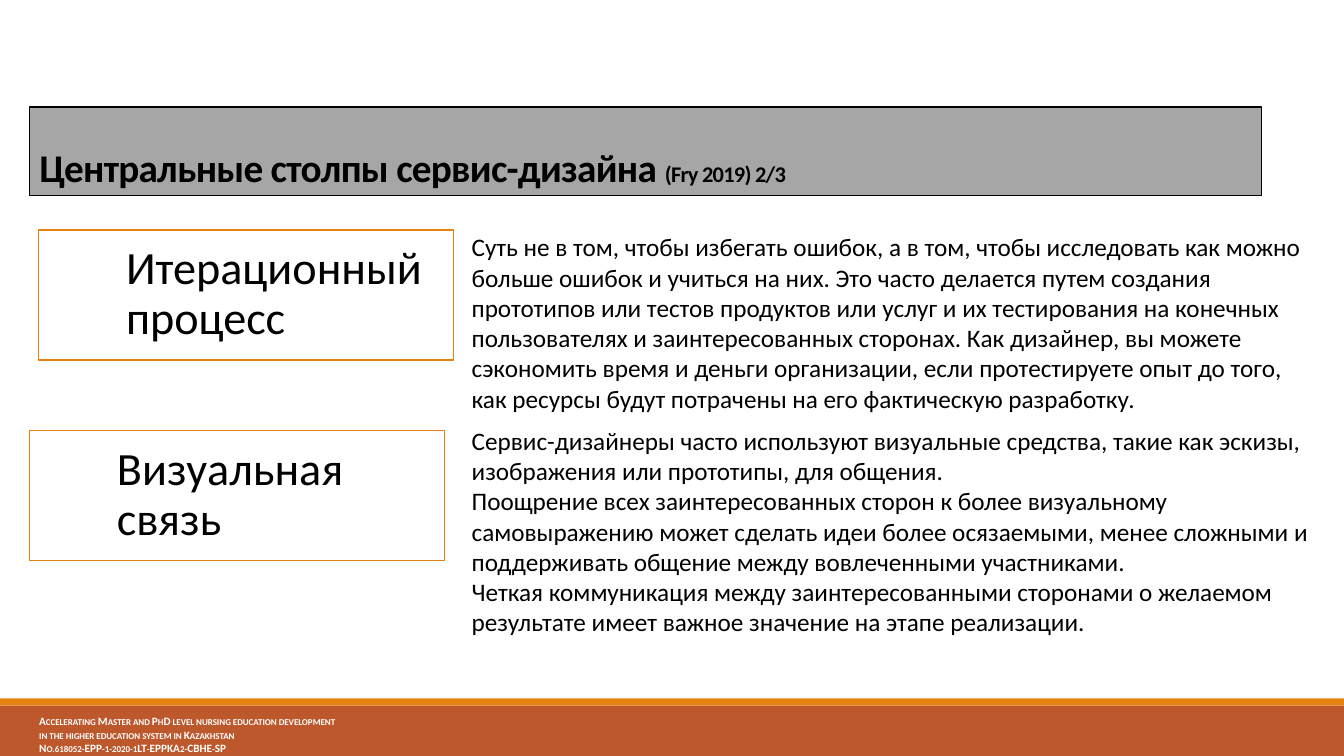
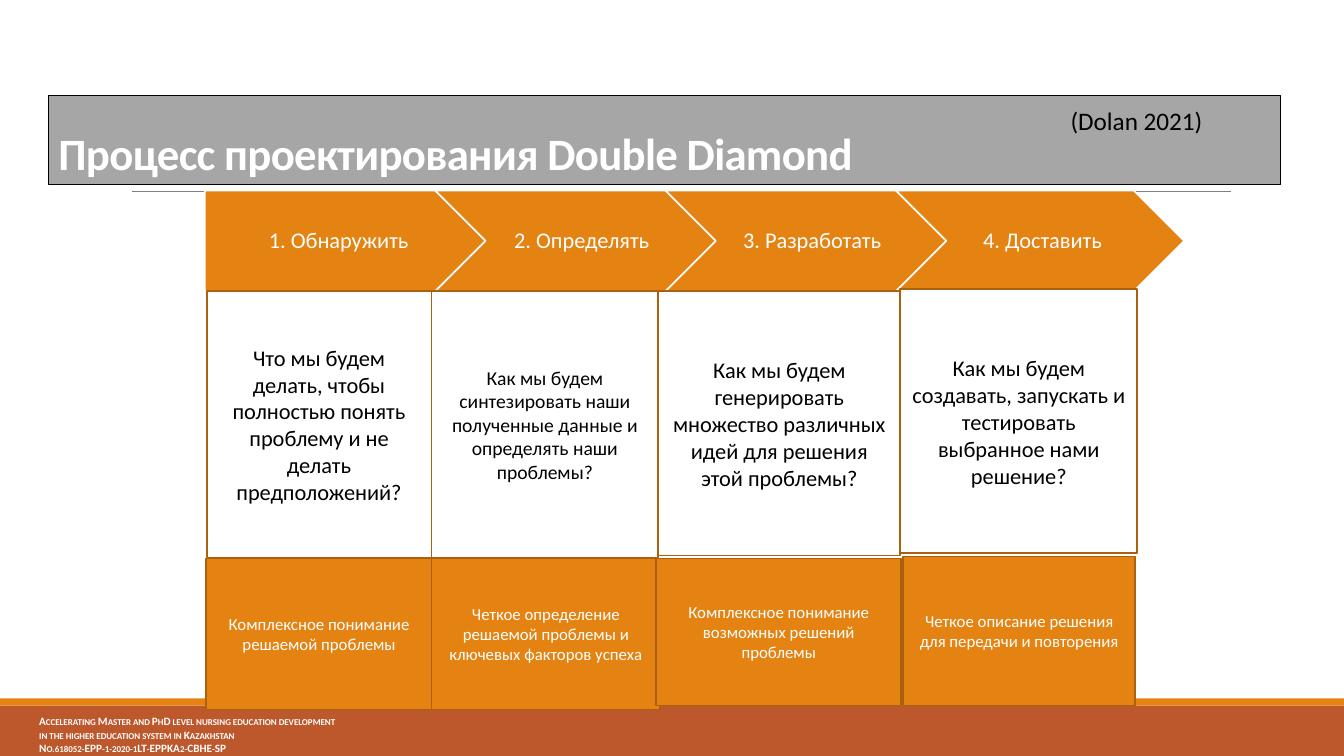
"""Build two service design slides with a shared title band and footer."""
from dataclasses import dataclass

import lxml.etree
import pptx
import pptx.dml.color
import pptx.enum.shapes
import pptx.enum.text
import pptx.oxml.ns
import pptx.util
from pptx.util import Inches

FONT = "Calibri"
COLORS = {
    "white": "FFFFFF",
    "black": "000000",
    "orange": "E48312",
    "brown": "A9610D",
    "rust": "BD582C",
    "band": "A6A6A6",
    "rule": "808080",
}
SHAPE = pptx.enum.shapes.MSO_SHAPE
ALIGN = pptx.enum.text.PP_ALIGN
ANCHOR = pptx.enum.text.MSO_ANCHOR
TITLE_SIZE = (12.22, 0.88)
BODY_INSETS = (0.1, 0.05, 0.1, 0.05)
FOOTER = [
    "Accelerating Master and PhD level nursing education development",
    "in the higher education system in Kazakhstan",
    "No.618052-EPP-1-2020-1LT-EPPKA2-CBHE-SP",
]


@dataclass(frozen=True)
class Box:
    left: float
    top: float
    width: float
    height: float


@dataclass(frozen=True)
class TextStyle:
    size: float
    color: str = "black"
    bold: bool = False
    align: ALIGN = ALIGN.LEFT
    anchor: ANCHOR = ANCHOR.TOP
    spacing: float = 1.0
    insets: tuple[float, float, float, float] = BODY_INSETS
    small_caps: bool = False


@dataclass(frozen=True)
class ShapeStyle:
    fill: str
    line: str | None = None
    weight: float = 1.0
    kind: SHAPE = SHAPE.RECTANGLE


@dataclass(frozen=True)
class Pillar:
    name: str
    label: Box
    text: Box
    paragraphs: list[str]


@dataclass(frozen=True)
class Stage:
    name: str
    question: str
    question_box: Box
    question_size: float
    outcome: str
    outcome_box: Box


PILLAR_TEXT = TextStyle(33, anchor=ANCHOR.MIDDLE, spacing=0.9, insets=(0.87, 0.14, 0.14, 0.14))
BODY_TEXT = TextStyle(18)
FOOTER_TEXT = TextStyle(8, "white", bold=True, small_caps=True)
STAGE_TEXT = TextStyle(16, "white", align=ALIGN.CENTER, anchor=ANCHOR.MIDDLE, spacing=0.9,
                       insets=(0.07, 0.05, 0.02, 0.05))
OUTCOME_TEXT = TextStyle(12, "white", align=ALIGN.CENTER, anchor=ANCHOR.MIDDLE)

PILLARS = [
    Pillar(
        "Итерационный процесс", Box(0.38, 2.28, 4.12, 1.29), Box(4.58, 2.25, 8.57, 1.92),
        ["Суть не в том, чтобы избегать ошибок, а в том, чтобы исследовать как можно больше "
         "ошибок и учиться на них. Это часто делается путем создания прототипов или тестов "
         "продуктов или услуг и их тестирования на конечных пользователях и заинтересованных "
         "сторонах. Как дизайнер, вы можете сэкономить время и деньги организации, если "
         "протестируете опыт до того, как ресурсы будут потрачены на его фактическую "
         "разработку."],
    ),
    Pillar(
        "Визуальная связь", Box(0.29, 4.27, 4.12, 1.29), Box(4.58, 4.17, 8.57, 2.22),
        ["Сервис-дизайнеры часто используют визуальные средства, такие как эскизы, "
         "изображения или прототипы, для общения.",
         "Поощрение всех заинтересованных сторон к более визуальному самовыражению может "
         "сделать идеи более осязаемыми, менее сложными и поддерживать общение между "
         "вовлеченными участниками.",
         "Четкая коммуникация между заинтересованными сторонами о желаемом результате имеет "
         "важное значение на этапе реализации."],
    ),
]
STAGES = [
    Stage("1. Обнаружить",
          "Что мы будем делать, чтобы полностью понять проблему и не делать предположений?",
          Box(2.05, 2.89, 2.23, 2.64), 16,
          "Комплексное понимание решаемой проблемы", Box(2.04, 5.54, 2.25, 1.5)),
    Stage("2. Определять",
          "Как мы будем синтезировать наши полученные данные и определять наши проблемы?",
          Box(4.28, 2.89, 2.25, 2.64), 14,
          "Четкое определение решаемой проблемы и ключевых факторов успеха",
          Box(4.28, 5.54, 2.27, 1.5)),
    Stage("3. Разработать",
          "Как мы будем генерировать множество различных идей для решения этой проблемы?",
          Box(6.53, 2.89, 2.4, 2.62), 16,
          "Комплексное понимание возможных решений проблемы", Box(6.51, 5.54, 2.43, 1.46)),
    Stage("4. Доставить",
          "Как мы будем создавать, запускать и тестировать выбранное нами решение?",
          Box(8.93, 2.87, 2.35, 2.62), 16,
          "Четкое описание решения для передачи и повторения", Box(8.96, 5.52, 2.3, 1.48)),
]


def rgb(name: str) -> pptx.dml.color.RGBColor:
    return pptx.dml.color.RGBColor.from_string(COLORS[name])


def place(box: Box) -> tuple[pptx.util.Length, ...]:
    return tuple(Inches(v) for v in (box.left, box.top, box.width, box.height))


def paint(sp, style: ShapeStyle) -> None:
    sp.fill.solid()
    sp.fill.fore_color.rgb = rgb(style.fill)
    if style.line is None:
        sp.line.fill.background()
    else:
        sp.line.color.rgb = rgb(style.line)
        sp.line.width = pptx.util.Pt(style.weight)


def write(sp, paragraphs: list[str], style: TextStyle) -> None:
    tf = sp.text_frame
    tf.word_wrap = True
    tf.vertical_anchor = style.anchor
    tf.margin_left, tf.margin_top, tf.margin_right, tf.margin_bottom = map(Inches, style.insets)
    for i, text in enumerate(paragraphs):
        p = tf.add_paragraph() if i else tf.paragraphs[0]
        p.alignment = style.align
        p.line_spacing = style.spacing
        p.font.name = FONT
        p.font.size = pptx.util.Pt(style.size)
        p.font.bold = style.bold
        p.font.color.rgb = rgb(style.color)
        r = p.add_run()
        r.text = text
        if style.small_caps:
            r._r.get_or_add_rPr().set("cap", "small")


def add_shape(s, box: Box, style: ShapeStyle, text: str = "",
              text_style: TextStyle | None = None) -> None:
    sp = s.shapes.add_shape(style.kind, *place(box))
    sp.shadow.inherit = False
    paint(sp, style)
    if text_style is not None:
        write(sp, [text], text_style)


def add_text(s, box: Box, paragraphs: list[str], style: TextStyle) -> None:
    write(s.shapes.add_textbox(*place(box)), paragraphs, style)


def add_rule(s, left: float, right: float, top: float) -> None:
    line = s.shapes.add_connector(pptx.enum.shapes.MSO_CONNECTOR.STRAIGHT,
                                  Inches(left), Inches(top), Inches(right), Inches(top))
    line.line.color.rgb = rgb("rule")
    line.line.width = pptx.util.Pt(0.5)
    lxml.etree.SubElement(line._element.spPr, pptx.oxml.ns.qn("a:effectLst"))


def add_slide(prs, left: float, top: float, color: str, runs: list[tuple[str, float]]):
    s = prs.slides.add_slide(prs.slide_layouts[5])
    sp = s.shapes.title
    sp.left, sp.top, sp.width, sp.height = place(Box(left, top, *TITLE_SIZE))
    paint(sp, ShapeStyle("band", "black"))
    tf = sp.text_frame
    tf.word_wrap = True
    tf.auto_size = pptx.enum.text.MSO_AUTO_SIZE.NONE
    tf.vertical_anchor = ANCHOR.BOTTOM
    p = tf.paragraphs[0]
    p.alignment = ALIGN.LEFT
    p.line_spacing = 0.85
    p.font.name = FONT
    p.font.bold = True
    p.font.color.rgb = rgb(color)
    for text, size in runs:
        r = p.add_run()
        r.text = text
        r.font.size = pptx.util.Pt(size)
        r._r.get_or_add_rPr().set("spc", "-50")
    add_shape(s, Box(0, 7, 13.33, 0.5), ShapeStyle("rust"))
    add_shape(s, Box(0, 6.93, 13.33, 0.07), ShapeStyle("orange"))
    add_text(s, Box(0.29, 7.04, 4.59, 0.46), FOOTER, FOOTER_TEXT)
    return s


def build_pillars(prs) -> None:
    s = add_slide(prs, 0.29, 1.06, "black",
                  [("Центральные столпы сервис-дизайна ", 28), ("(Fry 2019) 2/3", 16)])
    for pillar in PILLARS:
        add_shape(s, pillar.label, ShapeStyle("white", "orange"), pillar.name, PILLAR_TEXT)
        add_text(s, pillar.text, pillar.paragraphs, BODY_TEXT)


def build_process(prs) -> None:
    s = add_slide(prs, 0.48, 0.95, "white", [("Процесс проектирования Double Diamond", 32)])
    add_rule(s, 1.31, 12.21, 1.9)
    add_text(s, Box(10.52, 1, 2.1, 0.4), ["(Dolan 2021)"], BODY_TEXT)
    for i, stage in enumerate(STAGES):
        kind = SHAPE.CHEVRON if i else SHAPE.PENTAGON
        add_shape(s, Box(2.03 + i * 2.285, 1.89, 2.86, 1),
                  ShapeStyle("orange", "white", 1.25, kind), stage.name, STAGE_TEXT)
    for stage in STAGES:
        add_shape(s, stage.outcome_box, ShapeStyle("orange", "brown", 1.25),
                  stage.outcome, OUTCOME_TEXT)
    for stage in STAGES:
        add_shape(s, stage.question_box, ShapeStyle("white", "brown", 1.25), stage.question,
                  TextStyle(stage.question_size, align=ALIGN.CENTER, anchor=ANCHOR.MIDDLE))


def main() -> None:
    prs = pptx.Presentation()
    prs.slide_width = Inches(13.33)
    prs.slide_height = Inches(7.5)
    build_pillars(prs)
    build_process(prs)
    prs.save("out.pptx")


if __name__ == "__main__":
    main()
